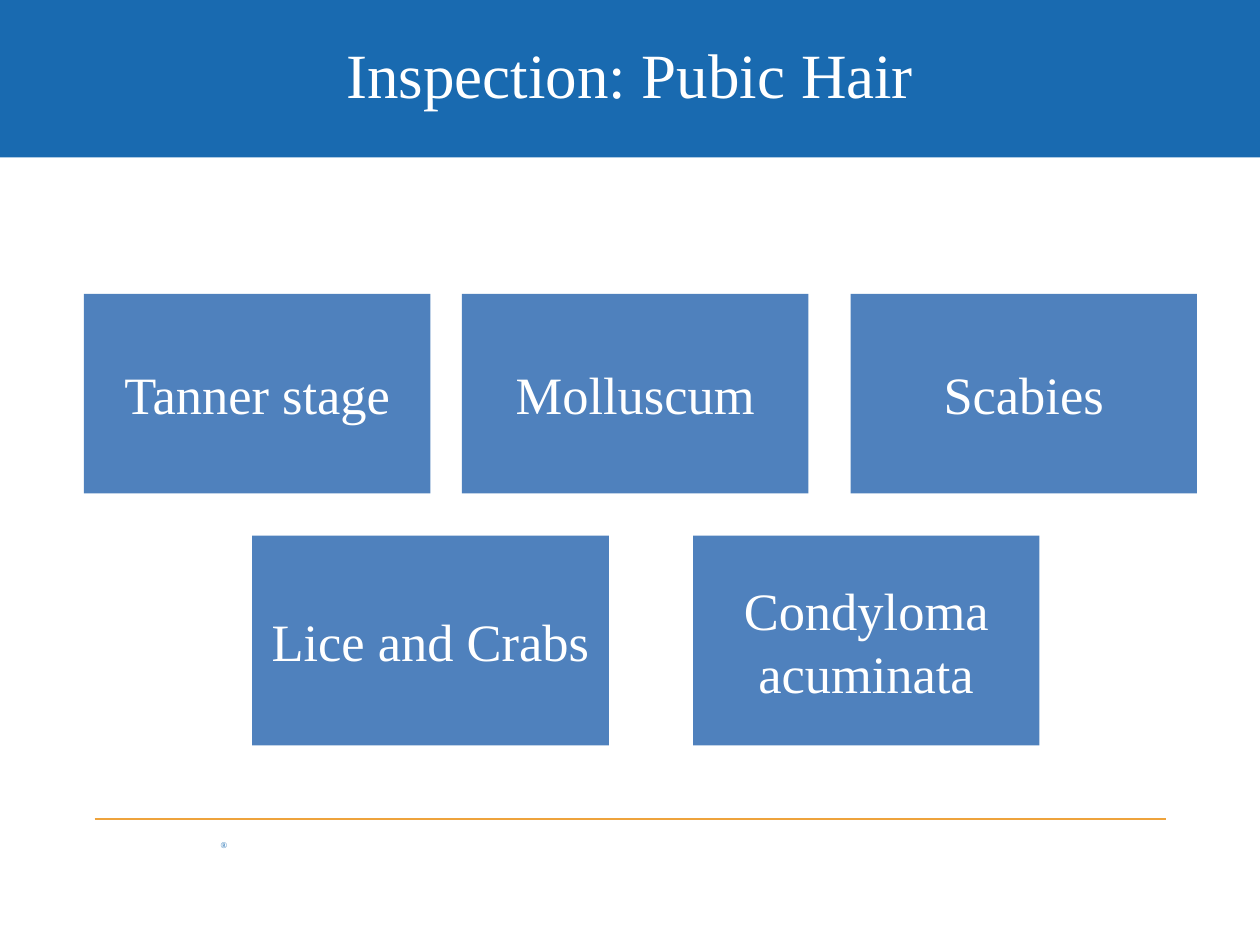
from dataclasses import dataclass

from lxml.etree import SubElement
from pptx import Presentation
from pptx.dml.color import RGBColor as Rgb
from pptx.enum.shapes import MSO_CONNECTOR as Wire, MSO_SHAPE as Form
from pptx.enum.text import MSO_ANCHOR as Anchor, PP_ALIGN as Align
from pptx.oxml.ns import qn
from pptx.slide import Slide
from pptx.text.text import TextFrame
from pptx.util import Inches, Pt

# Grid of 120 columns and 90 rows on a 10 x 7.5 inch slide
UNIT = Inches(10) // 120
COLS, ROWS = 120, 90


@dataclass(frozen=True)
class Theme:
    font: str = "Times New Roman"
    band: Rgb = Rgb(0x19, 0x6A, 0xB0)
    card: Rgb = Rgb(0x4F, 0x81, 0xBD)
    rule: Rgb = Rgb(0xEE, 0xA3, 0x3C)
    ink: Rgb = Rgb(0xFF, 0xFF, 0xFF)
    head: float = 36
    body: float = 30
    mark: float = 5
    line: float = 0.75


@dataclass(frozen=True)
class Box:
    col: int
    row: int
    wide: int
    high: int

    def place(self) -> tuple[int, ...]:
        return tuple(n * UNIT for n in (self.col, self.row, self.wide, self.high))


@dataclass(frozen=True)
class Card:
    text: str
    box: Box


THEME = Theme()
CARDS = (
    Card("Tanner stage", Box(8, 28, 33, 19)),
    Card("Molluscum", Box(44, 28, 33, 19)),
    Card("Scabies", Box(81, 28, 33, 19)),
    Card("Lice and Crabs", Box(24, 51, 34, 20)),
    Card("Condyloma acuminata", Box(66, 51, 33, 20)),
)


def write(frame: TextFrame, text: str, size: float, color: Rgb,
          align: Align = Align.CENTER) -> None:
    frame.word_wrap = True
    frame.vertical_anchor = Anchor.MIDDLE
    para = frame.paragraphs[0]
    para.alignment = align
    run = para.add_run()
    run.text = text
    run.font.name = THEME.font
    run.font.size = Pt(size)
    run.font.color.rgb = color


def add_block(slide: Slide, box: Box, fill: Rgb, text: str = "") -> None:
    block = slide.shapes.add_shape(Form.RECTANGLE, *box.place())
    block.shadow.inherit = False
    block.fill.solid()
    block.fill.fore_color.rgb = fill
    block.line.fill.background()
    if text:
        write(block.text_frame, text, THEME.body, THEME.ink)


def add_rule(slide: Slide, left: int, right: int, row: int) -> None:
    rule = slide.shapes.add_connector(
        Wire.STRAIGHT, left * UNIT, row * UNIT, right * UNIT, row * UNIT)
    rule.line.color.rgb = THEME.rule
    rule.line.width = Pt(THEME.line)
    SubElement(rule._element.spPr, qn("a:effectLst"))


def add_mark(slide: Slide, box: Box) -> None:
    frame = slide.shapes.add_textbox(*box.place()).text_frame
    frame.margin_left = frame.margin_right = 0
    frame.margin_top = frame.margin_bottom = 0
    write(frame, "®", THEME.mark, THEME.band, Align.LEFT)
    frame.vertical_anchor = Anchor.TOP


def set_title(slide: Slide, text: str, box: Box) -> None:
    title = slide.shapes.title
    title.left, title.top, title.width, title.height = box.place()
    write(title.text_frame, text, THEME.head, THEME.ink)
    # Bring the title in front of the band
    slide.shapes._spTree.append(title._element)


def main() -> None:
    deck = Presentation()
    deck.slide_width, deck.slide_height = COLS * UNIT, ROWS * UNIT
    slide = deck.slides.add_slide(deck.slide_layouts[5])

    # Header band, footer mark and rule
    add_block(slide, Box(0, 0, COLS, 15), THEME.band)
    add_mark(slide, Box(21, 80, 3, 1))
    add_rule(slide, 9, COLS - 9, 78)

    # Title and findings
    set_title(slide, "Inspection: Pubic Hair", Box(6, 1, 108, 12))
    for card in CARDS:
        add_block(slide, card.box, THEME.card, card.text)

    deck.save("out.pptx")


if __name__ == "__main__":
    main()
